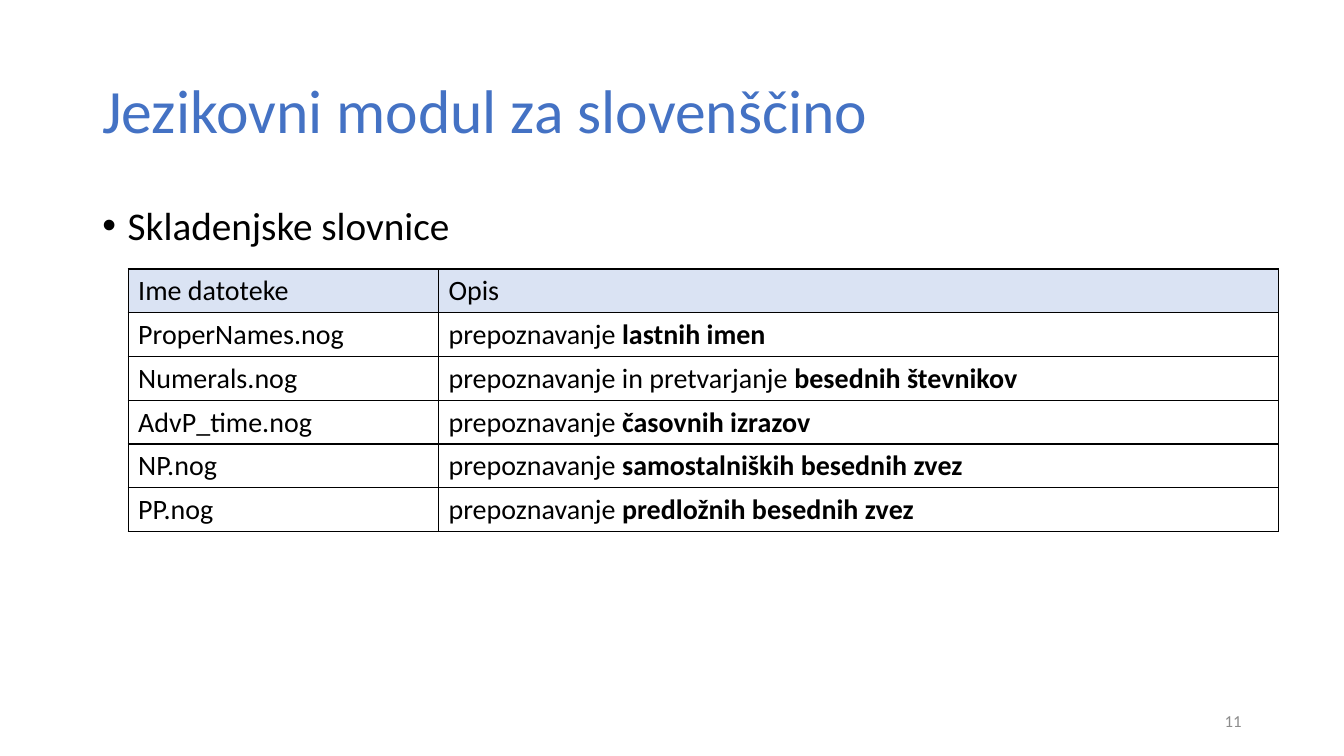
from dataclasses import dataclass

from lxml.etree import SubElement
from pptx import Presentation
from pptx.dml.color import RGBColor
from pptx.enum.text import MSO_ANCHOR as Anchor, PP_ALIGN as Align
from pptx.oxml.ns import qn
from pptx.util import Cm, Pt


@dataclass(frozen=True)
class Theme:
    font: str = "Calibri"
    accent: str = "4472C4"
    ink: str = "000000"
    muted: str = "8C8C8C"
    header: str = "DAE3F3"
    title_size: int = 44
    body_size: int = 28
    table_size: int = 20
    number_size: int = 12
    border: int = 1


THEME = Theme()
MARGIN = 2.33
CONTENT_WIDTH = 29.21
COLUMN_WIDTHS = (7.82, 21.16)
ROW_HEIGHT = 1.1
HEADINGS = ("Ime datoteke", "Opis")
GRAMMARS = (
    ("ProperNames.nog", "prepoznavanje ", "lastnih imen"),
    ("Numerals.nog", "prepoznavanje in pretvarjanje ", "besednih števnikov"),
    ("AdvP_time.nog", "prepoznavanje ", "časovnih izrazov"),
    ("NP.nog", "prepoznavanje ", "samostalniških besednih zvez"),
    ("PP.nog", "prepoznavanje ", "predložnih besednih zvez"),
)


def add_run(paragraph, text, size, color, bold=False):
    run = paragraph.add_run()
    run.text = text
    run.font.name = THEME.font
    run.font.size = Pt(size)
    run.font.bold = bold
    run.font.color.rgb = RGBColor.from_string(color)


def add_text(slide, box, text, size, color, anchor=Anchor.MIDDLE):
    frame = slide.shapes.add_textbox(*map(Cm, box)).text_frame
    frame.word_wrap = True
    frame.vertical_anchor = anchor
    paragraph = frame.paragraphs[0]
    add_run(paragraph, text, size, color)
    return paragraph


def add_bullet(paragraph):
    properties = paragraph._p.get_or_add_pPr()
    properties.set("marL", str(Cm(0.64)))
    properties.set("indent", str(Cm(-0.64)))
    SubElement(properties, qn("a:buFont"), typeface="Arial")
    SubElement(properties, qn("a:buChar"), char="•")


def add_borders(cell):
    properties = cell._tc.get_or_add_tcPr()
    for side in ("lnL", "lnR", "lnT", "lnB"):
        line = SubElement(properties, qn(f"a:{side}"), w=str(Pt(THEME.border)))
        fill = SubElement(line, qn("a:solidFill"))
        SubElement(fill, qn("a:srgbClr"), val=THEME.ink)


def fill_cell(cell, texts, color=None):
    add_borders(cell)
    if color:
        cell.fill.solid()
        cell.fill.fore_color.rgb = RGBColor.from_string(color)
    else:
        cell.fill.background()
    for position, text in enumerate(texts):
        add_run(cell.text_frame.paragraphs[0], text, THEME.table_size, THEME.ink, position > 0)


def add_grammar_table(slide):
    row_count = len(GRAMMARS) + 1
    table = slide.shapes.add_table(
        row_count, len(HEADINGS), Cm(3.23), Cm(6.78),
        Cm(sum(COLUMN_WIDTHS)), Cm(ROW_HEIGHT * row_count),
    ).table
    table.first_row = False
    table.horz_banding = False
    for column, width in zip(table.columns, COLUMN_WIDTHS):
        column.width = Cm(width)
    for row in table.rows:
        row.height = Cm(ROW_HEIGHT)
    for column, heading in enumerate(HEADINGS):
        fill_cell(table.cell(0, column), [heading], THEME.header)
    for row, (file_name, *description) in enumerate(GRAMMARS, 1):
        fill_cell(table.cell(row, 0), [file_name])
        fill_cell(table.cell(row, 1), description)


def main():
    deck = Presentation()
    deck.slide_width, deck.slide_height = Cm(33.87), Cm(19.05)
    slide = deck.slides.add_slide(deck.slide_layouts[6])

    title = add_text(slide, (MARGIN, 1.02, CONTENT_WIDTH, 3.68),
                     "Jezikovni modul za slovenščino", THEME.title_size, THEME.accent)
    title.line_spacing = 0.9

    topic = add_text(slide, (MARGIN, 5.08, CONTENT_WIDTH, 12.09),
                     "Skladenjske slovnice", THEME.body_size, THEME.ink, Anchor.TOP)
    add_bullet(topic)
    topic.line_spacing = 0.9

    add_grammar_table(slide)

    page_number = add_text(slide, (23.92, 17.65, 7.62, 1.02),
                           "11", THEME.number_size, THEME.muted)
    page_number.alignment = Align.RIGHT

    deck.save("out.pptx")


if __name__ == "__main__":
    main()
